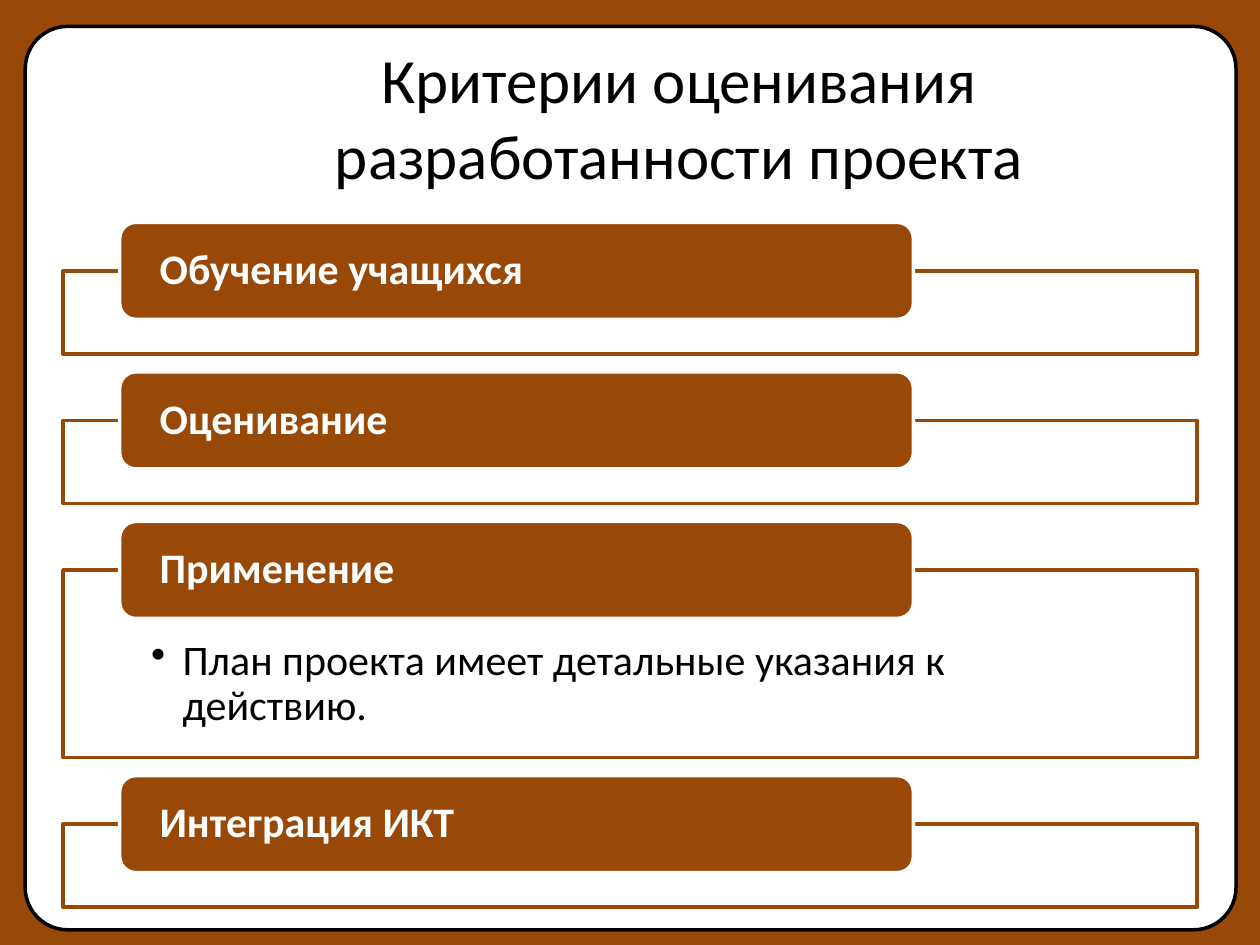
from lxml.etree import SubElement
from pptx import Presentation
from pptx.dml.color import RGBColor
from pptx.enum.shapes import MSO_SHAPE as Shape
from pptx.enum.text import MSO_ANCHOR as Anchor, MSO_AUTO_SIZE as AutoSize, PP_ALIGN as Align
from pptx.oxml.ns import qn
from pptx.util import Inches, Pt

BROWN = RGBColor(0x98, 0x48, 0x07)
WHITE = RGBColor(0xFF, 0xFF, 0xFF)
BLACK = RGBColor(0x00, 0x00, 0x00)

COLUMNS, ROWS = 100, 75  # square cells of a tenth of an inch

TITLE = "Критерии оценивания разработанности проекта"
CRITERIA = [
    ("Обучение учащихся", ""),
    ("Оценивание", ""),
    ("Применение", "План проекта имеет детальные указания к действию."),
    ("Интеграция ИКТ", ""),
]
FIRST_FRAME_TOP = 21.5
FRAME_GAP = 5.27
EMPTY_HEIGHT, FILLED_HEIGHT = 6.6, 14.9
TAB_RISE = 3.85


class CriteriaSlide:
    font_name = "Calibri"
    title_size = Pt(36)
    body_size = Pt(24)
    line_width = Pt(2)

    def __init__(self, deck):
        self.cell_width = deck.slide_width / COLUMNS
        self.cell_height = deck.slide_height / ROWS
        self.slide = deck.slides.add_slide(deck.slide_layouts[5])
        background = self.slide.background.fill
        background.solid()
        background.fore_color.rgb = BROWN

    def cells(self, left, top, width, height):
        """Turn columns and rows into slide lengths."""
        return (round(left * self.cell_width), round(top * self.cell_height),
                round(width * self.cell_width), round(height * self.cell_height))

    def box(self, preset, area, fill, line):
        shape = self.slide.shapes.add_shape(preset, *self.cells(*area))
        shape.shadow.inherit = False
        shape.fill.solid()
        shape.fill.fore_color.rgb = fill
        shape.line.color.rgb = line
        shape.line.width = self.line_width
        return shape

    def set_text(self, shape, text, size, color, bold=False, align=Align.LEFT,
                 anchor=Anchor.MIDDLE, margins=(0.1, 0.05, 0.1, 0.05)):
        frame = shape.text_frame
        frame.word_wrap = True
        frame.auto_size = AutoSize.NONE
        frame.vertical_anchor = anchor
        (frame.margin_left, frame.margin_top,
         frame.margin_right, frame.margin_bottom) = map(Inches, margins)
        frame.text = text
        paragraph = frame.paragraphs[0]
        paragraph.alignment = align
        font = paragraph.font
        font.name, font.size, font.bold = self.font_name, size, bold
        font.color.rgb = color
        return paragraph

    def panel(self):
        """Add the white rounded page behind everything else."""
        page = self.box(Shape.ROUNDED_RECTANGLE, (2, 2.1, 96.1, 71.7), WHITE, BLACK)
        page.adjustments[0] = 0.047
        self.slide.shapes._spTree.insert(2, page._element)

    def title(self, text):
        title = self.slide.shapes.title
        title.left, title.top, title.width, title.height = self.cells(12.8, 3, 82.2, 12.5)
        self.set_text(title, text, self.title_size, BLACK, align=Align.CENTER)

    def criterion(self, top, height, heading, detail):
        frame = self.box(Shape.RECTANGLE, (5, top, 90, height), WHITE, BROWN)
        if detail:
            paragraph = self.set_text(frame, detail, self.body_size, BLACK,
                                      anchor=Anchor.TOP, margins=(0.7, 0.55, 0.7, 0.19))
            paragraph.line_spacing = 0.9
            self.bullet(paragraph)
        tab = self.box(Shape.ROUNDED_RECTANGLE, (9.5, top - TAB_RISE, 63, 2 * TAB_RISE),
                       BROWN, WHITE)
        label = self.set_text(tab, heading, self.body_size, WHITE, bold=True,
                              margins=(0.28, 0, 0.28, 0))
        label.line_spacing = 0.9

    @staticmethod
    def bullet(paragraph):
        properties = paragraph._p.get_or_add_pPr()
        indent = Inches(0.25)
        properties.set("marL", str(indent))
        properties.set("indent", str(-indent))
        mark = SubElement(properties, qn("a:buChar"), char="•")
        properties.remove(mark)
        properties.insert_element_before(mark, "a:tabLst", "a:defRPr", "a:extLst")


def main():
    deck = Presentation()
    deck.slide_width, deck.slide_height = Inches(10), Inches(7.5)
    page = CriteriaSlide(deck)
    page.panel()
    page.title(TITLE)
    top = FIRST_FRAME_TOP
    for heading, detail in CRITERIA:
        height = FILLED_HEIGHT if detail else EMPTY_HEIGHT
        page.criterion(top, height, heading, detail)
        top += height + FRAME_GAP
    deck.save("out.pptx")


if __name__ == "__main__":
    main()
